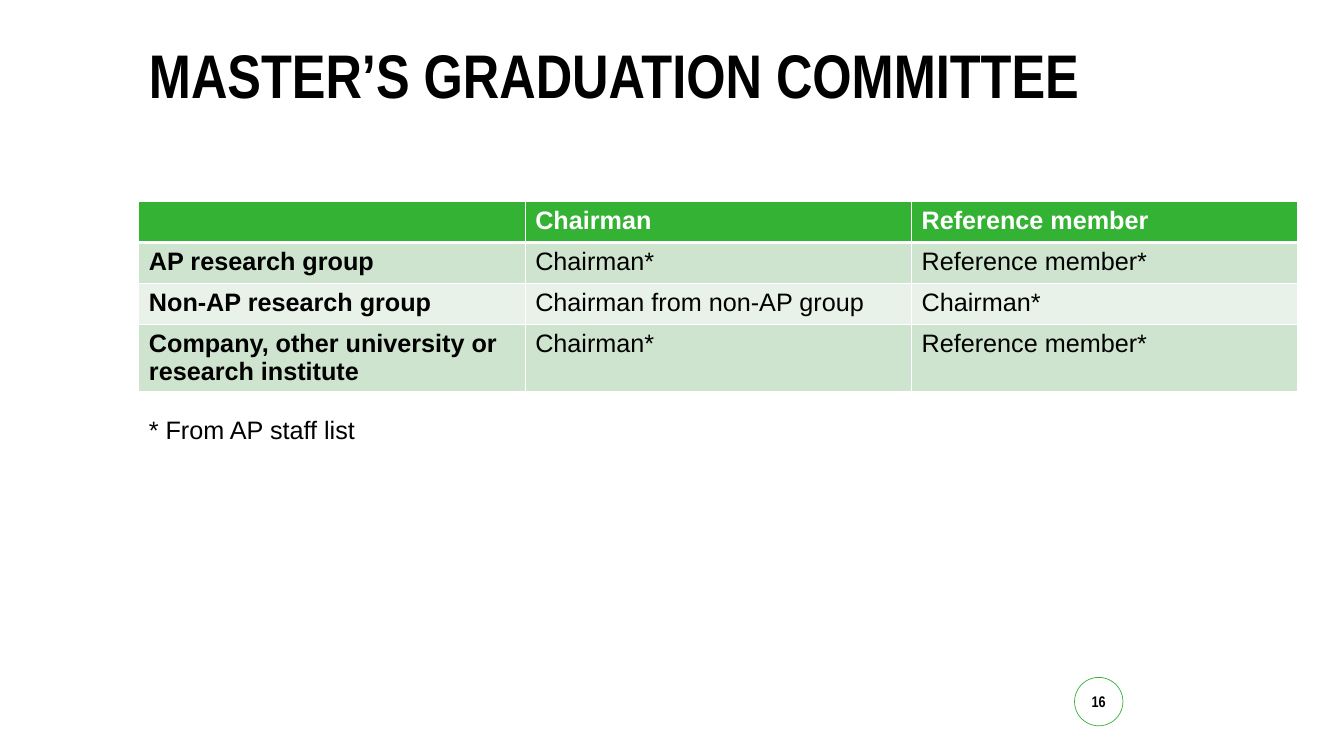
from lxml import etree
from pptx import Presentation
from pptx.dml.color import RGBColor
from pptx.enum.shapes import MSO_SHAPE
from pptx.enum.text import MSO_ANCHOR, MSO_AUTO_SIZE, PP_ALIGN
from pptx.oxml.ns import qn
from pptx.util import Cm, Pt

OVAL = MSO_SHAPE.OVAL
TOP, MIDDLE = MSO_ANCHOR.TOP, MSO_ANCHOR.MIDDLE
LEFT, CENTER = PP_ALIGN.LEFT, PP_ALIGN.CENTER
NO_AUTOSIZE = MSO_AUTO_SIZE.NONE

BLACK = RGBColor(0x00, 0x00, 0x00)
WHITE = RGBColor(0xFF, 0xFF, 0xFF)
GREEN = RGBColor(0x34, 0xB2, 0x34)
BAND_DARK = RGBColor(0xCE, 0xE4, 0xCE)
BAND_LIGHT = RGBColor(0xE8, 0xF2, 0xE8)

MARGIN, CONTENT_WIDTH = 3.5, 29.21
ROW_HEIGHTS = (1.03, 1.03, 1.03, 1.7)
COMMITTEE = (
    ("", "Chairman", "Reference member"),
    ("AP research group", "Chairman*", "Reference member*"),
    ("Non-AP research group", "Chairman from non-AP group", "Chairman*"),
    ("Company, other university or research institute",
     "Chairman*", "Reference member*"),
)


def write(frame, text, size, font="Arial", color=BLACK, bold=False, align=LEFT):
    para = frame.paragraphs[0]
    para.alignment = align
    span = para.add_run()
    span.text = text
    span.font.name = font
    span.font.size = Pt(size)
    span.font.bold = bold
    span.font.color.rgb = color
    return para


def add_title(page, left, top, width, height):
    title = page.shapes.title
    title.left, title.top = Cm(left), Cm(top)
    title.width, title.height = Cm(width), Cm(height)
    title.fill.solid()
    title.fill.fore_color.rgb = WHITE
    frame = title.text_frame
    frame.vertical_anchor = TOP
    frame.word_wrap = True
    frame.auto_size = NO_AUTOSIZE
    para = write(frame, "MASTER’S GRADUATION COMMITTEE", 44, "Arial Narrow", bold=True)
    para.line_spacing = 0.9


def set_borders(cell, bottom_width):
    """Draw white cell edges; call before filling, as the schema puts lines first."""
    properties = cell._tc.get_or_add_tcPr()
    for side, width in (("L", 1), ("R", 1), ("T", 1), ("B", bottom_width)):
        line = etree.SubElement(properties, qn(f"a:ln{side}"), w=str(Pt(width)))
        fill = etree.SubElement(line, qn("a:solidFill"))
        etree.SubElement(fill, qn("a:srgbClr"), val=str(WHITE))


def add_committee_table(page, left, top, width):
    columns = len(COMMITTEE[0])
    table = page.shapes.add_table(
        len(COMMITTEE), columns, Cm(left), Cm(top), Cm(width), Cm(sum(ROW_HEIGHTS))
    ).table
    for column in table.columns:
        column.width = Cm(width / columns)
    for i, texts in enumerate(COMMITTEE):
        table.rows[i].height = Cm(ROW_HEIGHTS[i])
        header = i == 0
        band = GREEN if header else (BAND_LIGHT, BAND_DARK)[i % 2]
        for j, text in enumerate(texts):
            cell = table.cell(i, j)
            set_borders(cell, 3 if header else 1)
            cell.fill.solid()
            cell.fill.fore_color.rgb = band
            if text:
                write(cell.text_frame, text, 18, color=WHITE if header else BLACK,
                      bold=header or j == 0)


def add_footnote(page, left, top, width, height):
    box = page.shapes.add_textbox(Cm(left), Cm(top), Cm(width), Cm(height))
    box.text_frame.word_wrap = True
    write(box.text_frame, "* From AP staff list", 18)


def add_page_number(page, left, top, size):
    badge = page.shapes.add_shape(OVAL, Cm(left), Cm(top), Cm(size), Cm(size))
    badge.shadow.inherit = False
    badge.fill.solid()
    badge.fill.fore_color.rgb = WHITE
    badge.line.color.rgb = GREEN
    badge.line.width = Pt(0.5)
    frame = badge.text_frame
    frame.margin_left = frame.margin_right = 0
    frame.margin_top = frame.margin_bottom = 0
    frame.vertical_anchor = MIDDLE
    write(frame, "16", 11, "Arial Narrow", bold=True, align=CENTER)


def main():
    deck = Presentation()
    deck.slide_width, deck.slide_height = Cm(33.87), Cm(19.05)
    page = deck.slides.add_slide(deck.slide_layouts[5])
    add_title(page, MARGIN, 1.02, CONTENT_WIDTH, 3.68)
    add_committee_table(page, MARGIN, 5.08, CONTENT_WIDTH)
    add_page_number(page, 27.08, 17.07, 1.22)
    add_footnote(page, MARGIN, 10.31, 28.93, 1.02)
    deck.save("out.pptx")


if __name__ == "__main__":
    main()
